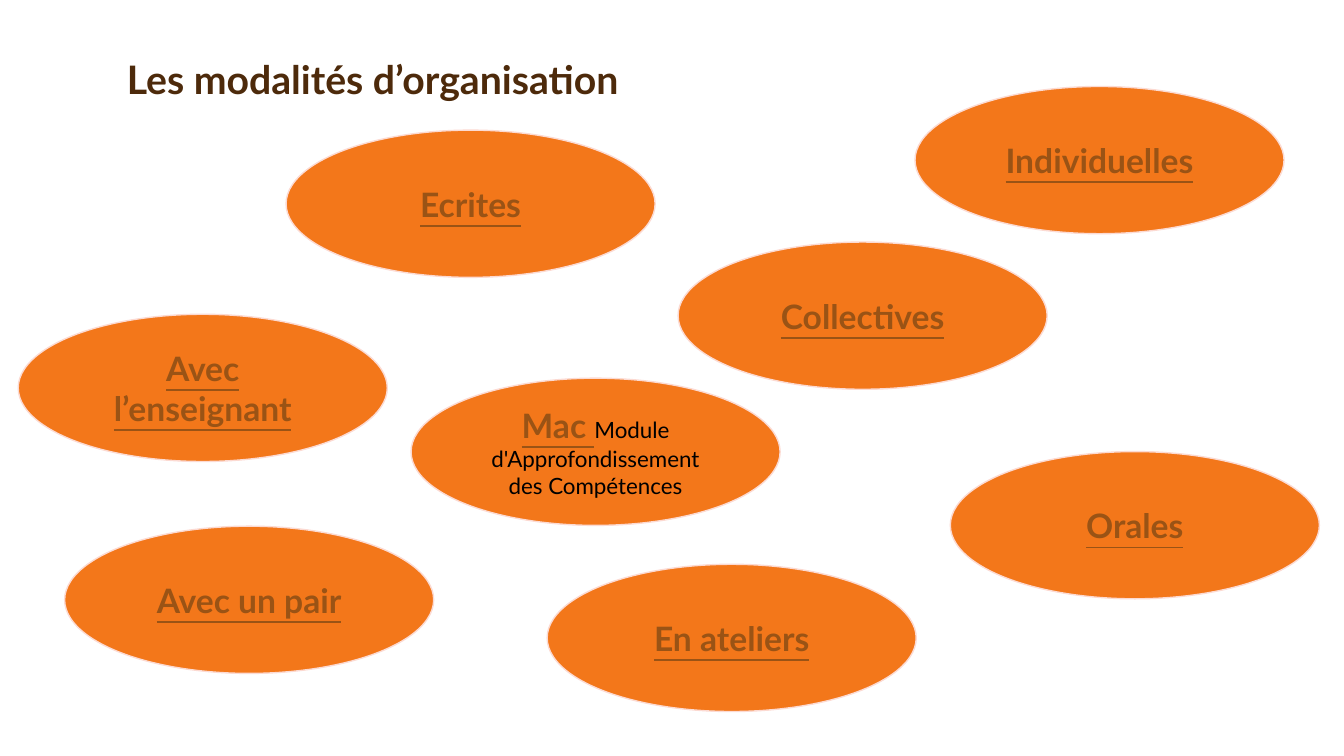
import dataclasses

import pptx
import pptx.dml.color
import pptx.enum.shapes
import pptx.enum.text
import pptx.util

Cm = pptx.util.Cm
Pt = pptx.util.Pt
RGB = pptx.dml.color.RGBColor.from_string


@dataclasses.dataclass(frozen=True)
class Theme:
    font: str = "Lato"
    title_color: str = "4D2A0B"
    label_color: str = "9A5315"
    detail_color: str = "000000"
    bubble_fill: str = "F3771A"
    bubble_line: str = "FCDAD2"
    title_size: int = 28
    label_size: int = 24
    detail_size: int = 16


class SlideBuilder:
    bubble_width = Cm(9.3)
    bubble_height = Cm(3.71)

    def __init__(self, slide, theme):
        self.slide = slide
        self.theme = theme

    def add_run(self, p, text, size, color, bold=False, underline=False):
        r = p.add_run()
        r.text = text
        r.font.name = self.theme.font
        r.font.size = Pt(size)
        r.font.bold = bold
        r.font.underline = underline
        r.font.color.rgb = RGB(color)

    def title(self, text, left, top, width, height):
        sp = self.slide.shapes.add_textbox(Cm(left), Cm(top), Cm(width), Cm(height))
        tf = sp.text_frame
        tf.word_wrap = True
        tf.vertical_anchor = pptx.enum.text.MSO_ANCHOR.BOTTOM
        p = tf.paragraphs[0]
        p.line_spacing = 0.9
        self.add_run(p, text, self.theme.title_size, self.theme.title_color, bold=True)

    def bubble(self, left, top, label, detail=""):
        t = self.theme
        sp = self.slide.shapes.add_shape(
            pptx.enum.shapes.MSO_SHAPE.OVAL,
            Cm(left), Cm(top), self.bubble_width, self.bubble_height)
        sp.shadow.inherit = False
        sp.fill.solid()
        sp.fill.fore_color.rgb = RGB(t.bubble_fill)
        sp.line.color.rgb = RGB(t.bubble_line)
        sp.line.width = Pt(1)
        tf = sp.text_frame
        tf.word_wrap = True
        tf.vertical_anchor = pptx.enum.text.MSO_ANCHOR.MIDDLE
        p = tf.paragraphs[0]
        p.alignment = pptx.enum.text.PP_ALIGN.CENTER
        self.add_run(p, label, t.label_size, t.label_color, bold=True, underline=True)
        if detail:
            self.add_run(p, detail, t.detail_size, t.detail_color)


# Left, top (cm), label and optional detail of each way of working
MODALITIES = [
    (23.06, 2.18, "Individuelles"),
    (17.09, 6.1, "Collectives"),
    (23.95, 11.38, "Orales"),
    (7.21, 3.28, "Ecrites"),
    (1.63, 13.26, "Avec un pair"),
    (0.46, 7.92, "Avec l’enseignant"),
    (13.79, 14.22, "En ateliers"),
    (10.36, 9.53, "Mac ", "Module d'Approfondissement des Compétences"),
]


def main():
    prs = pptx.Presentation()
    prs.slide_width = Cm(33.87)
    prs.slide_height = Cm(19.05)
    s = SlideBuilder(prs.slides.add_slide(prs.slide_layouts[6]), Theme())

    # Heading
    s.title("Les modalités d’organisation", 2.95, 0.84, 27.94, 1.88)

    # Scattered bubbles
    for modality in MODALITIES:
        s.bubble(*modality)

    prs.save("out.pptx")


if __name__ == "__main__":
    main()
